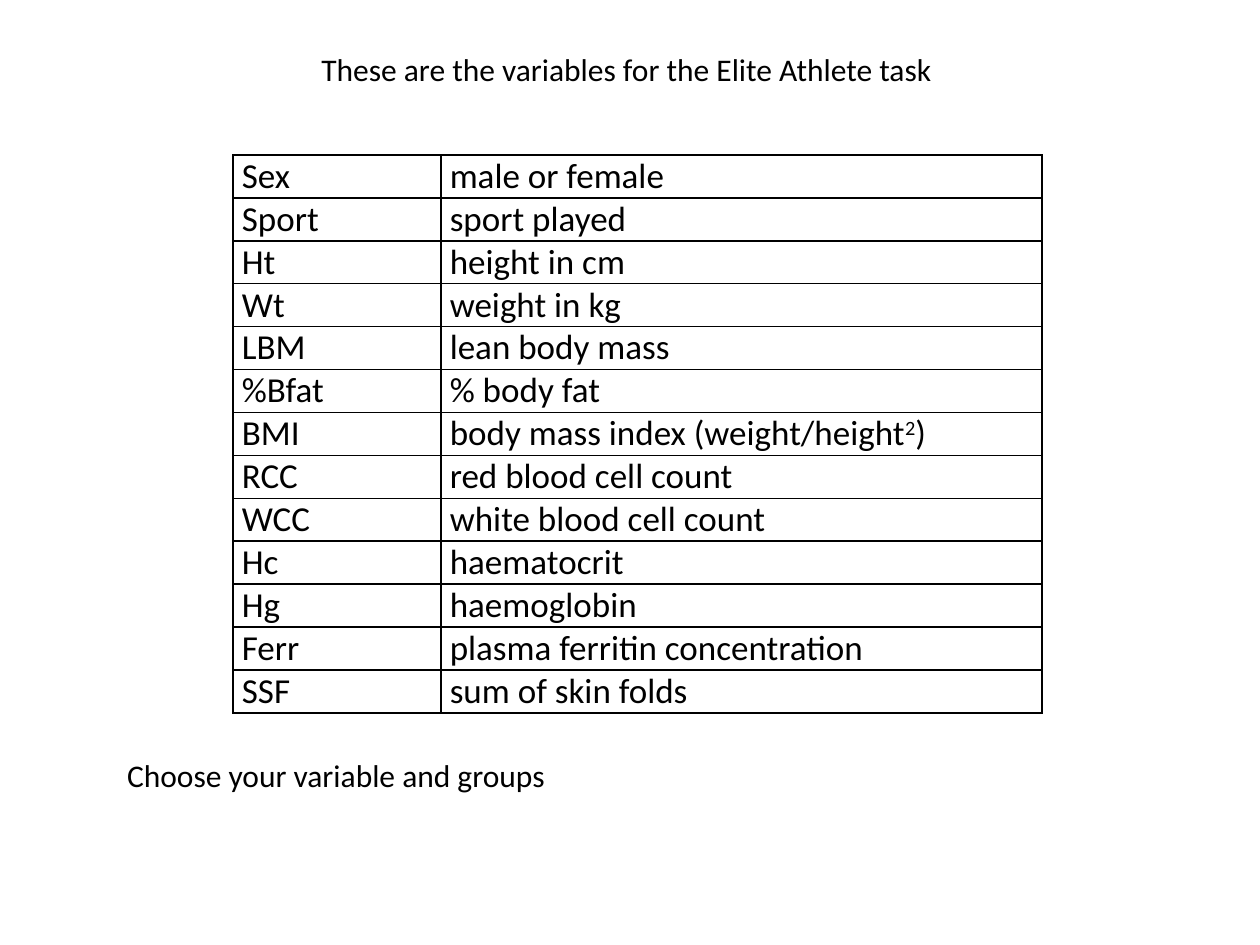
from lxml import etree
from pptx import Presentation
from pptx import util as u
from pptx.dml.color import RGBColor
from pptx.enum import text
from pptx.oxml.ns import qn

ROWS = [
    ("Sex", "male or female"),
    ("Sport", "sport played"),
    ("Ht", "height in cm"),
    ("Wt", "weight in kg"),
    ("LBM", "lean body mass"),
    ("%Bfat", "% body fat"),
    ("BMI", "body mass index (weight/height^2^)"),
    ("RCC", "red blood cell count"),
    ("WCC", "white blood cell count"),
    ("Hc", "haematocrit"),
    ("Hg", "haemoglobin"),
    ("Ferr", "plasma ferritin concentration"),
    ("SSF", "sum of skin folds"),
]


def color(code):
    return RGBColor.from_string(code)


class Deck:
    """Holds the style and the current slide, with lengths in inches on a 10 by 7.5 page."""

    face, ink = "Calibri", "000000"

    def __init__(self):
        self.file = Presentation()
        self.file.slide_width, self.file.slide_height = u.Inches(10), u.Inches(7.5)
        self.slide = self.file.slides.add_slide(self.file.slide_layouts[5])

    def style(self, para, size):
        para.alignment = text.PP_ALIGN.LEFT
        para.font.name, para.font.size = self.face, u.Pt(size)
        para.font.color.rgb = color(self.ink)

    def fill(self, frame, words):
        frame.word_wrap = True
        frame.auto_size = text.MSO_AUTO_SIZE.NONE
        frame.vertical_anchor = text.MSO_ANCHOR.TOP
        frame.text = words
        self.style(frame.paragraphs[0], 18)

    def title(self, words, *box):
        shape = self.slide.shapes.title
        shape.left, shape.top, shape.width, shape.height = map(u.Inches, box)
        self.fill(shape.text_frame, words)

    def note(self, words, *box):
        shape = self.slide.shapes.add_textbox(*map(u.Inches, box))
        self.fill(shape.text_frame, words)

    def border(self, cell, width):
        props = cell._tc.get_or_add_tcPr()
        for side in "LRTB":
            line = etree.SubElement(props, qn(f"a:ln{side}"), w=str(u.Pt(width)))
            paint = etree.SubElement(line, qn("a:solidFill"))
            etree.SubElement(paint, qn("a:srgbClr"), val=self.ink)

    def cell(self, cell, words):
        cell.margin_left = cell.margin_right = u.Inches(0.07)
        cell.margin_top = cell.margin_bottom = 0
        self.border(cell, 1)
        cell.fill.background()
        para = cell.text_frame.paragraphs[0]
        self.style(para, 20)
        for i, part in enumerate(words.split("^")):
            run = para.add_run()
            run.text = part
            if i % 2:
                run._r.get_or_add_rPr().set("baseline", "30000")

    def table(self, rows, left, top, widths, height):
        box = map(u.Inches, (left, top, sum(widths), height))
        grid = self.slide.shapes.add_table(len(rows), len(widths), *box).table
        grid.first_row = grid.horz_banding = False
        for col, width in zip(grid.columns, widths):
            col.width = u.Inches(width)
        for r, row in enumerate(rows):
            for c, words in enumerate(row):
                self.cell(grid.cell(r, c), words)


def main():
    deck = Deck()
    deck.title("These are the variables for the Elite Athlete task", 2.45, 0.35, 5.19, 0.4)
    deck.table(ROWS, 1.85, 1.23, (1.65, 4.77), 4.33)
    deck.note("Choose your variable and groups", 0.91, 5.95, 8.58, 0.4)
    deck.file.save("out.pptx")


if __name__ == "__main__":
    main()
